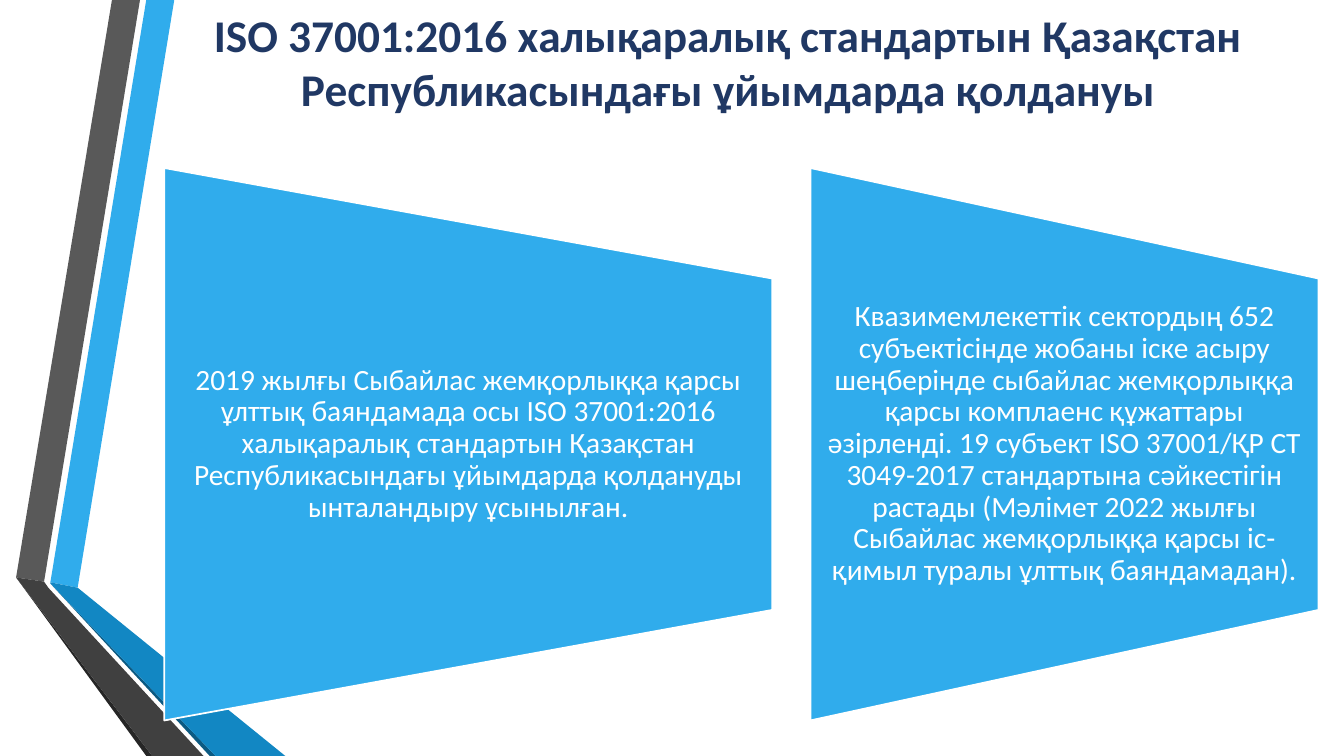
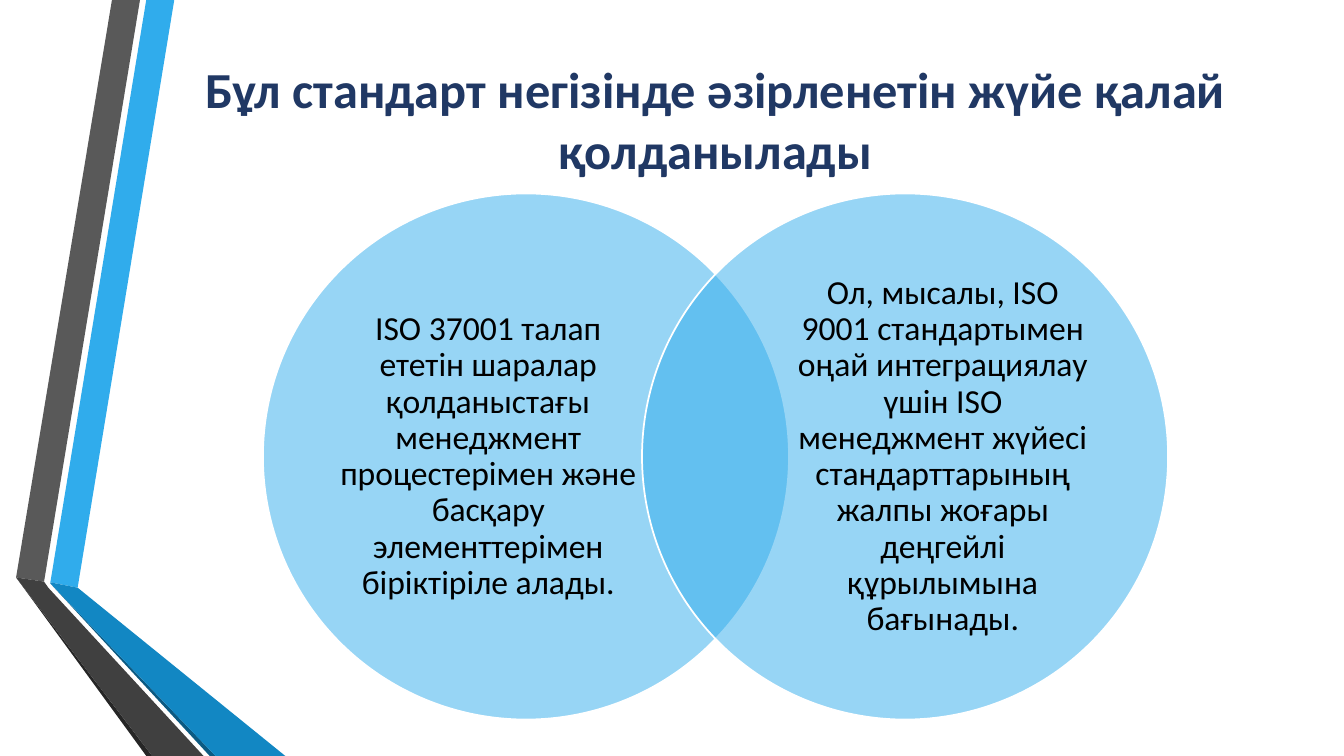
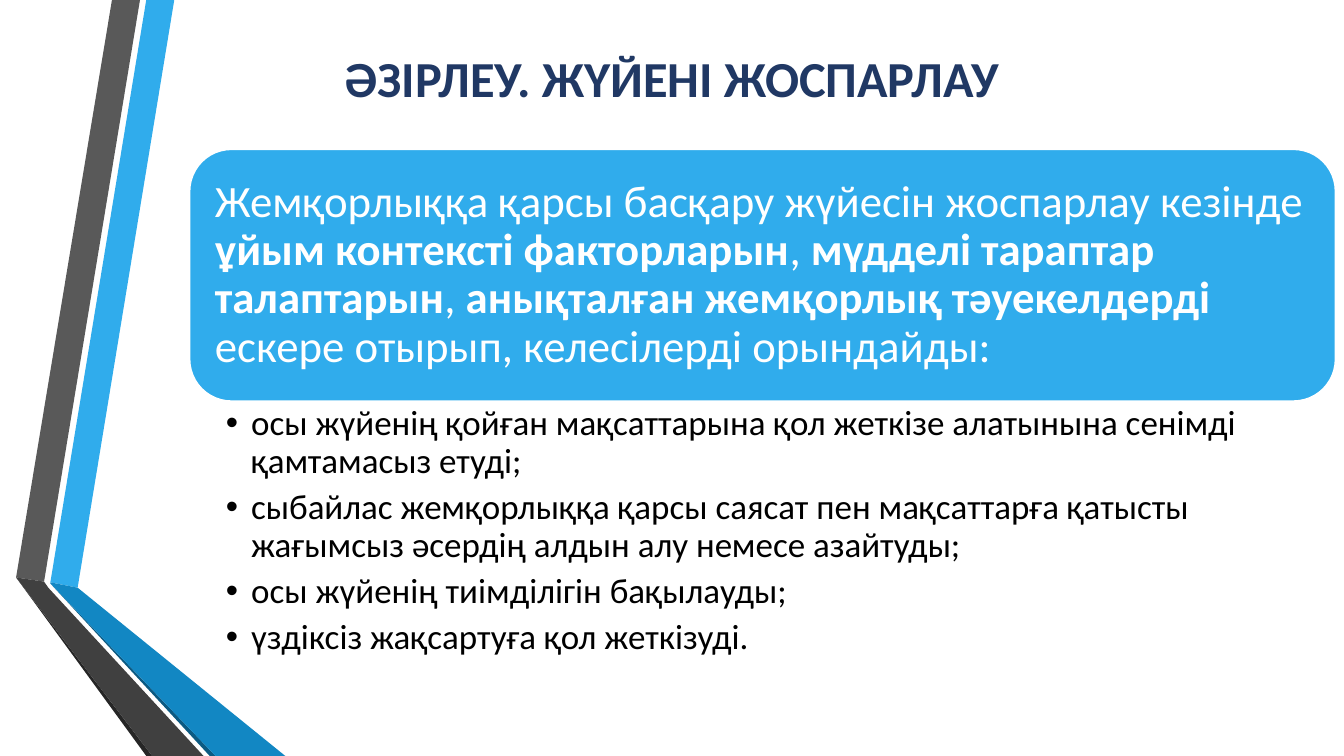
import pptx
import pptx.dml.color
import pptx.enum.shapes
import pptx.enum.text
import pptx.oxml.ns
import pptx.util
from lxml import etree

Pt = pptx.util.Pt
Preset = pptx.enum.shapes.MSO_SHAPE
Anchor = pptx.enum.text.MSO_ANCHOR
Align = pptx.enum.text.PP_ALIGN
qn = pptx.oxml.ns.qn

FONT = "Calibri"
COLORS = {
    "white": "FFFFFF",
    "black": "000000",
    "navy": "203864",
    "sky": "30ACEC",
    "blue": "1287C3",
    "deep_blue": "0C5A82",
    "grey": "595959",
    "dark_grey": "404040",
    "charcoal": "262626",
}

# Folded ribbons at the left edge, from back to front: colour and corners
RIBBONS = [
    ("sky", [(36, 416), (55.5, 419.8), (124.5, 0), (104.5, 0)]),
    ("grey", [(100, 0), (80, 0), (11.5, 412.5), (31.5, 415.5)]),
    ("charcoal", [(11.5, 412.5), (104.5, 540), (108.7, 540)]),
    ("deep_blue", [(36, 416.8), (149.8, 540), (154, 540)]),
    ("blue", [(36, 416.8), (154, 540), (203.8, 540), (55.5, 419.8), (36, 416)]),
    ("dark_grey", [(145.4, 540), (34.5, 419.8), (31.5, 415.5), (11.5, 412.5), (108.7, 540)]),
]


def rgb(name):
    return pptx.dml.color.RGBColor.from_string(COLORS[name])


def paint(shape, color, outlined=False, opacity=100):
    shape.shadow.inherit = False
    shape.fill.solid()
    shape.fill.fore_color.rgb = rgb(color)
    if opacity < 100:
        color_element = shape.fill._xPr.find(".//" + qn("a:srgbClr"))
        etree.SubElement(color_element, qn("a:alpha"), val=str(opacity * 1000))
    if outlined:
        shape.line.color.rgb = rgb("white")
        shape.line.width = Pt(1.25)
    else:
        shape.line.fill.background()


def add_preset(slide, preset, left, top, width, height, opacity=100):
    shape = slide.shapes.add_shape(preset, Pt(left), Pt(top), Pt(width), Pt(height))
    paint(shape, "sky", outlined=True, opacity=opacity)
    return shape


def add_box(slide, left, top, width, height):
    return slide.shapes.add_textbox(Pt(left), Pt(top), Pt(width), Pt(height))


def set_frame(shape, insets, anchor=Anchor.MIDDLE):
    """Wrap the text; insets run left, top, right, bottom."""
    frame = shape.text_frame
    frame.word_wrap = True
    frame.vertical_anchor = anchor
    (frame.margin_left, frame.margin_top,
     frame.margin_right, frame.margin_bottom) = map(Pt, insets)
    return frame


def write(paragraph, runs, size, color, align=Align.CENTER, spacing=0.9):
    """Fill a paragraph from (text, bold) pairs."""
    paragraph.alignment = align
    paragraph.line_spacing = spacing
    for text, bold in runs:
        run = paragraph.add_run()
        run.text = text
        run.font.name = FONT
        run.font.size = Pt(size)
        run.font.bold = bold
        run.font.color.rgb = rgb(color)


def add_bullet(paragraph, indent):
    properties = paragraph._p.get_or_add_pPr()
    properties.set("marL", str(Pt(indent)))
    properties.set("indent", str(-Pt(indent)))
    etree.SubElement(properties, qn("a:buFont"), typeface="Arial")
    etree.SubElement(properties, qn("a:buChar"), char="•")


def add_ribbons(slide):
    for color, corners in RIBBONS:
        start, *others = [(Pt(x), Pt(y)) for x, y in corners]
        builder = slide.shapes.build_freeform(*start)
        builder.add_line_segments(others, close=True)
        paint(builder.convert_to_shape(), color)


def add_title(slide, text, box, size=36):
    frame = set_frame(add_box(slide, *box), (7.2, 3.6, 7.2, 3.6))
    write(frame.paragraphs[0], [(text, True)], size, "navy", spacing=1.0)


def add_slide(presentation, title, box, size=36):
    slide = presentation.slides.add_slide(presentation.slide_layouts[6])
    add_ribbons(slide)
    add_title(slide, title, box, size)
    return slide


def add_trapezoid(slide, left, width, text):
    """Trapezoid turned so that its wide side is on the left, with upright text."""
    top, height = 120, 394.6
    shift = (width - height) / 2
    shape = add_preset(slide, Preset.FLOWCHART_MANUAL_OPERATION,
                       left + shift, top - shift, height, width)
    shape.rotation = 270
    label = add_box(slide, left, top + height / 5, width, height * 3 / 5)
    frame = set_frame(label, (10.5, 0, 10.5, 0))
    write(frame.paragraphs[0], [(text, False)], 21, "white")


def add_venn(slide, texts):
    left, top, diameter, step = 187.8, 138.2, 375.8, 270.8
    text_width, text_height, outer_gap = 216.7, 287.3, 52.6
    text_offsets = (outer_gap, diameter - text_width - outer_gap)
    for index, (text, offset) in enumerate(zip(texts, text_offsets)):
        circle_left = left + index * step
        add_preset(slide, Preset.OVAL, circle_left, top, diameter, diameter, opacity=50)
        label = add_box(slide, circle_left + offset, top + (diameter - text_height) / 2,
                        text_width, text_height)
        frame = set_frame(label, (0, 0, 0, 0))
        write(frame.paragraphs[0], [(text, False)], 24, "black")


def add_plan(slide, heading_runs, items):
    left, top, width, height = 135.4, 106.6, 818.6, 180
    panel = add_preset(slide, Preset.ROUNDED_RECTANGLE, left, top, width, height)
    frame = set_frame(panel, (9.4, 9.4, 9.4, 9.4))
    write(frame.paragraphs[0], heading_runs, 32, "white", Align.LEFT)

    frame = set_frame(add_box(slide, left, top + height, width, 193),
                      (26, 2.9, 18, 2.9), Anchor.TOP)
    for index, item in enumerate(items):
        paragraph = frame.add_paragraph() if index else frame.paragraphs[0]
        write(paragraph, [(item, False)], 25, "black", Align.LEFT)
        paragraph.space_after = Pt(6)
        add_bullet(paragraph, 18)


def main():
    presentation = pptx.Presentation()
    presentation.slide_width = Pt(960)
    presentation.slide_height = Pt(540)

    slide = add_slide(
        presentation,
        "ISO 37001:2016 халықаралық стандартын Қазақстан Республикасындағы ұйымдарда қолдануы",
        (80.6, 7.2, 879, 73), 32.4)
    add_trapezoid(
        slide, 117.4, 434.2,
        "2019 жылғы Сыбайлас жемқорлыққа қарсы ұлттық баяндамада осы ISO 37001:2016 "
        "халықаралық стандартын Қазақстан Республикасындағы ұйымдарда қолдануды "
        "ынталандыру ұсынылған.")
    add_trapezoid(
        slide, 578.9, 362.9,
        "Квазимемлекеттік сектордың 652 субъектісінде жобаны іске асыру шеңберінде "
        "сыбайлас жемқорлыққа қарсы комплаенс құжаттары әзірленді. 19 субъект "
        "ISO 37001/ҚР СТ 3049-2017 стандартына сәйкестігін растады (Мәлімет 2022 жылғы "
        "Сыбайлас жемқорлыққа қарсы іс-қимыл туралы ұлттық баяндамадан).")

    slide = add_slide(
        presentation,
        "Бұл стандарт негізінде әзірленетін жүйе қалай қолданылады",
        (116.6, 15.8, 789, 138.2))
    add_venn(slide, [
        "ISO 37001 талап ететін шаралар қолданыстағы менеджмент процестерімен және "
        "басқару элементтерімен біріктіріле алады.",
        "Ол, мысалы, ISO 9001 стандартымен оңай интеграциялау үшін ISO менеджмент "
        "жүйесі стандарттарының жалпы жоғары деңгейлі құрылымына бағынады.",
    ])

    slide = add_slide(presentation, "ӘЗІРЛЕУ. ЖҮЙЕНІ ЖОСПАРЛАУ", (0, 7.2, 960, 96.5))
    add_plan(slide, [
        ("Жемқорлыққа қарсы басқару жүйесін жоспарлау кезінде ", False),
        ("ұйым контексті факторларын", True),
        (", ", False),
        ("мүдделі тараптар талаптарын", True),
        (", ", False),
        ("анықталған жемқорлық тәуекелдерді ", True),
        ("ескере отырып, келесілерді орындайды:", False),
    ], [
        "осы жүйенің қойған мақсаттарына қол жеткізе алатынына сенімді қамтамасыз етуді;",
        "сыбайлас жемқорлыққа қарсы саясат пен мақсаттарға қатысты жағымсыз әсердің "
        "алдын алу немесе азайтуды;",
        "осы жүйенің тиімділігін бақылауды;",
        "үздіксіз жақсартуға қол жеткізуді.",
    ])

    presentation.save("out.pptx")


if __name__ == "__main__":
    main()
